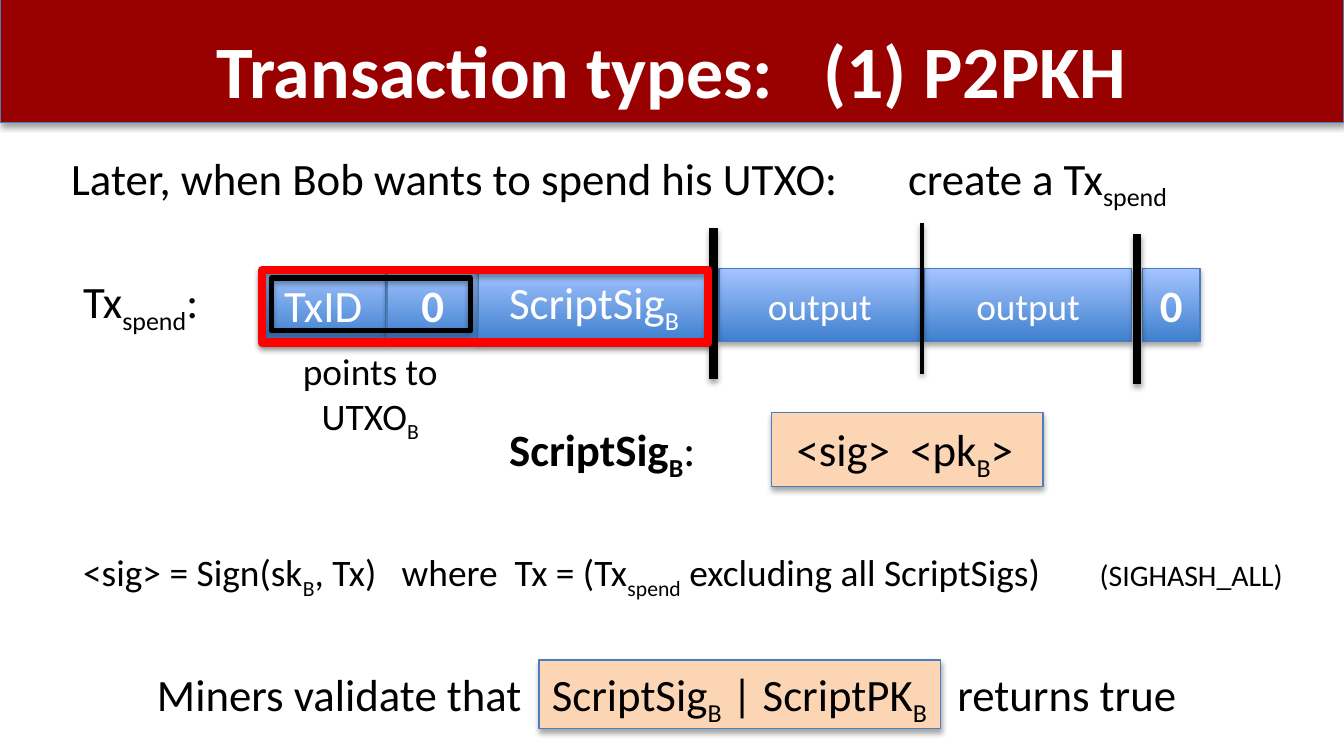
import pptx
import pptx.util
import pptx.dml.color
import pptx.enum.shapes
import pptx.enum.text
import pptx.oxml
import pptx.oxml.ns
from lxml import etree

Inches = pptx.util.Inches
Pt = pptx.util.Pt
RECTANGLE = pptx.enum.shapes.MSO_SHAPE.RECTANGLE
STRAIGHT = pptx.enum.shapes.MSO_CONNECTOR.STRAIGHT
CENTER = pptx.enum.text.PP_ALIGN.CENTER
MIDDLE = pptx.enum.text.MSO_ANCHOR.MIDDLE

FONT = "Calibri"
COLORS = {
    "band": "990000", "edge": "4B7EBC", "peach": "FCD5B5",
    "cell_dark": "3F80CE", "cell_light": "A4C4FF",
    "white": "FFFFFF", "black": "000000", "red": "FF0000",
}

TITLE = "Transaction types:   (1) P2PKH"
BODY = ("Later, when Bob wants to spend his UTXO:\t   create a Tx", "spend")

CELL_TOP, CELL_HEIGHT = 2, 0.54
CELLS = [
    (1.94, 0.93, ("TxID",), 24, False),
    (2.88, 0.68, ("0",), 24, True),
    (3.56, 1.72, ("ScriptSig", "B"), 24, False),
    (5.35, 1.5, ("output",), 20, False),
    (6.88, 1.54, ("output",), 20, False),
    (8.5, 0.43, ("0",), 24, True),
]
DIVIDER_HEIGHT = 1.12
DIVIDERS = [(5.31, 1.7, 4.5), (6.86, 1.66, 2), (8.46, 1.74, 4.5)]
FRAMES = [
    ((2.02, 2.07, 1.48, 0.39), "black", 3),
    ((1.95, 2.01, 3.32, 0.54), "red", 4.5),
]
PEACH_BOXES = [(5.74, 3.07, 2.02, 0.55), (4.01, 4.91, 2.99, 0.51)]

TX_LABEL = ("Tx", "spend", ":")
POINTER_LINES = [("points to",), ("UTXO", "B")]
SCRIPT_SIG = ("ScriptSig", "B", ":          <sig>  <pk", "B", ">")
SIGNATURE = ("<sig> = Sign(sk", "B", ", Tx)   where  Tx = (Tx", "spend",
             " excluding all ScriptSigs)       ")
SIGHASH = "(SIGHASH_ALL)"
VALIDATION = ("Miners validate that   ScriptSig", "B", " | ScriptPK", "B",
              "   returns true")


def rgb(name):
    return pptx.dml.color.RGBColor.from_string(COLORS[name])


def add_shadow(shape, opacity=35):
    properties = shape._element.spPr
    for old in properties.findall(pptx.oxml.ns.qn("a:effectLst")):
        properties.remove(old)
    properties.append(pptx.oxml.parse_xml(
        f'<a:effectLst {pptx.oxml.ns.nsdecls("a")}>'
        f'<a:outerShdw blurRad="{Pt(3.1)}" dist="{Pt(1.8)}" dir="5400000" rotWithShape="0">'
        f'<a:srgbClr val="{COLORS["black"]}"><a:alpha val="{opacity * 1000}"/></a:srgbClr>'
        '</a:outerShdw></a:effectLst>'))


def format_run(run, size, color="black", bold=False):
    run.font.name = FONT
    run.font.size = Pt(size)
    run.font.bold = bold
    run.font.color.rgb = rgb(color)


def write_with_subscripts(paragraph, pieces, size, color="black", bold=False):
    for index, piece in enumerate(pieces):
        run = paragraph.add_run()
        run.text = piece
        format_run(run, size, color, bold)
        if index % 2:
            run.font._element.set("baseline", "-25000")


def place(shape, left, top, width, height):
    shape.left, shape.top = Inches(left), Inches(top)
    shape.width, shape.height = Inches(width), Inches(height)


def add_rectangle(slide, box, fill=None, line="edge", line_width=0.75):
    shape = slide.shapes.add_shape(RECTANGLE, *map(Inches, box))
    shape.shadow.inherit = False
    if fill:
        shape.fill.solid()
        shape.fill.fore_color.rgb = rgb(fill)
    else:
        shape.fill.background()
    shape.line.color.rgb = rgb(line)
    shape.line.width = Pt(line_width)
    add_shadow(shape)
    return shape


def add_cell(slide, left, width, pieces, size, bold):
    shape = add_rectangle(slide, (left, CELL_TOP, width, CELL_HEIGHT))
    shape.fill.gradient()
    shape.fill.gradient_angle = 90
    for stop, color in zip(shape.fill.gradient_stops, ("cell_dark", "cell_light")):
        stop.color.rgb = rgb(color)
    shape.text_frame.vertical_anchor = MIDDLE
    paragraph = shape.text_frame.paragraphs[0]
    paragraph.alignment = CENTER
    write_with_subscripts(paragraph, pieces, size, "white", bold)


def add_divider(slide, x, top, width):
    line = slide.shapes.add_connector(
        STRAIGHT, Inches(x), Inches(top), Inches(x), Inches(top + DIVIDER_HEIGHT))
    line.line.color.rgb = rgb("black")
    line.line.width = Pt(width)
    add_shadow(line, 38)


def add_text(slide, box, lines, size, wrap=False, alignment=None):
    frame = slide.shapes.add_textbox(*map(Inches, box)).text_frame
    frame.word_wrap = wrap
    for index, pieces in enumerate(lines):
        paragraph = frame.add_paragraph() if index else frame.paragraphs[0]
        paragraph.alignment = alignment
        write_with_subscripts(paragraph, pieces, size)
    return frame.paragraphs[0]


def fill_placeholders(slide):
    title = slide.shapes.title
    place(title, 0.5, 0.14, 9, 0.68)
    frame = title.text_frame
    frame.text = TITLE
    frame.word_wrap = False
    frame.vertical_anchor = MIDDLE
    frame.margin_top, frame.margin_bottom = Inches(0.1), Inches(0.04)
    frame.paragraphs[0].alignment = CENTER
    format_run(frame.paragraphs[0].runs[0], 39.6, "white", True)

    body = slide.placeholders[1]
    place(body, 0.43, 1.07, 9.5, 1.64)
    paragraph = body.text_frame.paragraphs[0]
    write_with_subscripts(paragraph, BODY, 24)
    properties = paragraph._p.get_or_add_pPr()
    properties.set("marL", "0")
    properties.set("indent", "0")
    etree.SubElement(properties, pptx.oxml.ns.qn("a:buNone"))


def main():
    presentation = pptx.Presentation()
    presentation.slide_width = Inches(10)
    presentation.slide_height = Inches(10 * 9 / 16)
    slide = presentation.slides.add_slide(presentation.slide_layouts[1])

    band = add_rectangle(slide, (0, -0.01, 10, 0.92), "band")
    slide.shapes.title._element.addprevious(band._element)
    fill_placeholders(slide)

    for box in PEACH_BOXES:
        add_rectangle(slide, box, "peach")
    for cell in CELLS:
        add_cell(slide, *cell)
    for divider in DIVIDERS:
        add_divider(slide, *divider)
    for box, color, width in FRAMES:
        add_rectangle(slide, box, None, color, width)

    add_text(slide, (0.52, 1.99, 1.14, 0.5), [TX_LABEL], 24)
    add_text(slide, (2.15, 2.54, 1.21, 0.77), POINTER_LINES, 20, alignment=CENTER)
    script_sig = add_text(slide, (3.69, 3.09, 4.14, 0.56), [SCRIPT_SIG], 24, wrap=True)
    for run in script_sig.runs[:2]:
        run.font.bold = True
    signature = add_text(slide, (0.52, 4.04, 9.32, 0.56), [SIGNATURE], 20, wrap=True)
    sighash = signature.add_run()
    sighash.text = SIGHASH
    format_run(sighash, 16)
    add_text(slide, (1.07, 4.91, 7.94, 0.5), [VALIDATION], 24)

    presentation.save("out.pptx")


if __name__ == "__main__":
    main()
